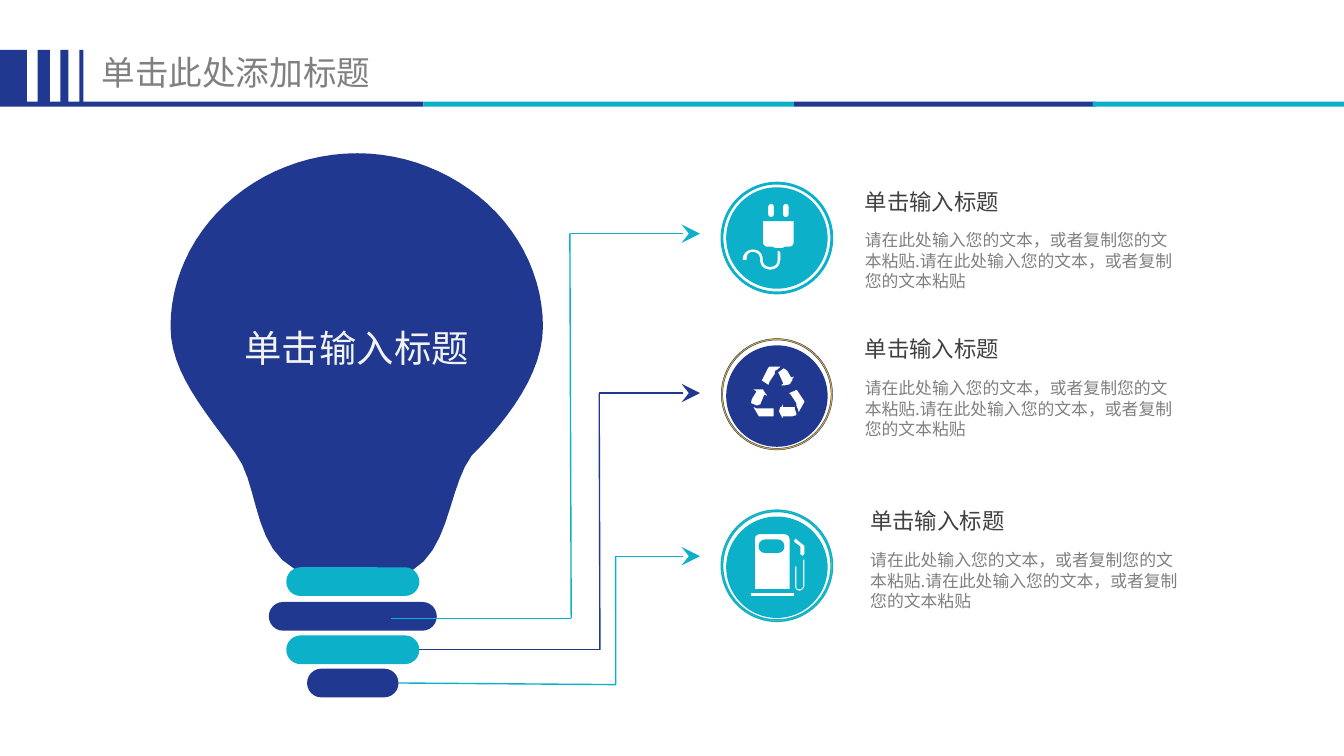
from itertools import cycle

from lxml import etree
from pptx import Presentation
from pptx.dml.color import RGBColor
from pptx.enum import shapes, text
from pptx.oxml.ns import qn
from pptx.util import Pt

HUE = {"navy": "20388F", "teal": "0CB1C9", "white": "FFFFFF", "gold": "FFC000",
       "sky": "00B0F0", "lemon": "EAE05E", "pale": "F2F2F2", "dark": "404040",
       "grey": "808080"}
FONT = "Noto Sans CJK SC"
KIND = shapes.MSO_SHAPE
HEAD = "单击输入标题"
BODY = "请在此处输入您的文本，或者复制您的文本粘贴.请在此处输入您的文本，或者复制您的文本粘贴"

BULB = [(91.4, 175), (91.4, 150.5, 102.2, 126.7, 121, 109.4),
        (139.7, 92.2, 164.9, 82.1, 191.5, 82.1),
        (217.4, 82.1, 242.6, 92.2, 261.4, 109.4),
        (280.1, 126.7, 290.9, 150.5, 290.9, 175),
        (290.9, 199.4, 272.9, 223.9, 252.7, 244.1),
        (236.2, 266.4, 243.4, 316.8, 192.2, 309.6),
        (130.3, 316.1, 143.3, 265, 126, 242.6),
        (109.4, 219.6, 91.4, 199.4, 91.4, 175)]
PLUG = [(-7.9, -9.4), (9.4, -9.4), (9.4, 2.2), (9.4, 3.6, 8.6, 5, 7.2, 5),
        (5, 5), (2.9, 5.8), (-0.7, 5.8), (-2.9, 5), (-5.8, 5),
        (-6.5, 5, -7.9, 3.6, -7.9, 2.2)]
CORD = [(0.7, 6.5), (0, 6.5, 0, 7.2, 0, 7.9), (0, 11.5),
        (0, 13.7, -1.4, 15.1, -3.6, 15.1), (-5.8, 15.1, -7.2, 13.7, -7.2, 11.5),
        (-7.2, 7.9, -9.4, 5.8, -13, 5.8), (-15.8, 5.8, -18.7, 7.9, -18.7, 11.5),
        (-18.7, 12.2, -18, 12.2, -17.3, 12.2), (-16.6, 12.2, -15.8, 12.2, -15.8, 11.5),
        (-15.8, 9.4, -15.1, 7.9, -13, 7.9), (-10.8, 7.9, -9.4, 9.4, -9.4, 11.5),
        (-9.4, 15.1, -7.2, 17.3, -3.6, 17.3), (0, 17.3, 2.2, 15.1, 2.2, 11.5),
        (2.2, 7.9), (2.2, 7.2, 1.4, 6.5, 0.7, 6.5)]
CYCLE = [
    [(8.6, -7.9), (8.6, -7.2), (7.2, -5), (4.3, -4.3), (0.7, -4.3), (2.9, -5.8),
     (0.7, -10.8), (0, -11.5), (0.7, -12.2), (3.6, -14.4), (5.8, -13),
     (7.9, -9.4), (10.8, -10.8)],
    [(0.7, -13), (2.9, -15.1), (-4.3, -15.1), (-5, -14.4), (-8.6, -7.2),
     (-4.3, -4.3), (-3.6, -6.5), (-0.7, -10.8), (-0.7, -12.2)],
    [(4.3, 15.1), (3.6, 12.2), (8.6, 12.2), (10.8, 11.5), (10.8, 10), (10, 7.9),
     (10, 6.5), (3.6, 6.5), (2.9, 2.9), (2.2, 6.5), (1.4, 6.5), (0.7, 9.4),
     (2.2, 12.2)],
    [(10.8, 7.9), (11.5, 10.8), (15.1, 4.3), (15.1, 3.6), (10.8, -2.9),
     (5.8, -0.7), (7.2, 0.7), (10, 5), (10, 6.5)],
    [(-14.4, -2.9), (-11.5, -1.4), (-13.7, 2.2), (-14.4, 5), (-10.8, 6.5),
     (-8.6, 5.8), (-6.5, 0.7), (-3.6, 2.2), (-5.8, -0.7), (-7.2, -2.9)],
    [(-10.8, 7.2), (-13.7, 5.8), (-10, 12.2), (-1.4, 12.2), (-1.4, 7.2)]]
SPOUT = [(15.1, -10.8), (14.4, -11.5), (10.8, -14.4),
         (10.8, -15.1, 10, -15.1, 9.4, -14.4), (8.6, -13.7, 8.6, -13, 9.4, -12.2),
         (12.2, -10.1), (12.2, -6.5), (12.2, -5.8, 13, -5, 13.7, -5),
         (14.4, -5, 15.1, -5.8, 15.1, -6.5)]
HOSE = [(13.7, -3.6), (13.7, 10.8), (13.7, 11.5, 13, 12.2, 12.2, 12.2),
        (10.8, 12.2, 10.8, 11.5, 10.8, 10.8), (10.8, 0), (9.4, 0), (9.4, 10.8),
        (9.4, 12.2, 10, 13.7, 12.2, 13.7), (13.7, 13.7, 15.1, 12.2, 15.1, 10.8),
        (15.1, -3.6)]


def trace(path, steps=12):
    dots = [path[0]]
    for part in path[1:]:
        if len(part) == 2:
            dots.append(part)
            continue
        a, b, c, d = dots[-1], part[:2], part[2:4], part[4:]
        for i in range(1, steps + 1):
            t = i / steps
            s = 1 - t
            dots.append(tuple(s**3 * a[k] + 3 * s * s * t * b[k]
                              + 3 * s * t * t * c[k] + t**3 * d[k] for k in (0, 1)))
    return dots


class Deck:
    def __init__(self, slide):
        self.items = slide.shapes

    def paint(self, item, fill, line=None, wide=0.75):
        item.shadow.inherit = False
        item.fill.solid()
        item.fill.fore_color.rgb = RGBColor.from_string(HUE[fill])
        if line:
            item.line.color.rgb = RGBColor.from_string(HUE[line])
            item.line.width = Pt(wide)
        else:
            item.line.fill.background()
        return item

    def shape(self, kind, x, y, w, h, fill, line=None, adj=None, wide=0.75):
        item = self.items.add_shape(kind, Pt(x), Pt(y), Pt(w), Pt(h))
        if adj is not None:
            item.adjustments[0] = adj
        return self.paint(item, fill, line, wide)

    def free(self, paths, fill, line=None, x=0, y=0):
        pen = None
        for path in paths:
            dots = [(Pt(x + a), Pt(y + b)) for a, b in trace(path)]
            if pen is None:
                pen = self.items.build_freeform(*dots[0], scale=1.0)
            else:
                pen.move_to(*dots[0])
            pen.add_line_segments(dots[1:], close=True)
        return self.paint(pen.convert_to_shape(), fill, line)

    def line(self, x1, y1, x2, y2, hue, arrow=False, base=None):
        item = self.items.add_connector(shapes.MSO_CONNECTOR.STRAIGHT,
                                        Pt(x1), Pt(y1), Pt(x2), Pt(y2))
        item.line.color.rgb = RGBColor.from_string(HUE[hue])
        item.line.width = Pt(0.75)
        if arrow:
            etree.SubElement(item.line._get_or_add_ln(), qn("a:tailEnd"), type="stealth",
                             w="lg", len="lg")
        etree.SubElement(item._element.spPr, qn("a:effectLst"))
        if base is not None:
            item.begin_connect(base, 3)

    def run(self, para, words, size, hue):
        run = para.add_run()
        run.text = words
        run.font.size = Pt(size)
        run.font.name = FONT
        run.font.color.rgb = RGBColor.from_string(HUE[hue])
        etree.SubElement(run.font._element, qn("a:ea"), typeface=FONT)

    def frame(self, item, foot=2.7):
        frame = item.text_frame
        frame.word_wrap = True
        frame.margin_left = frame.margin_right = Pt(5.4)
        frame.margin_top, frame.margin_bottom = Pt(2.7), Pt(foot)
        return frame

    def box(self, x, y, w, h):
        frame = self.frame(self.items.add_textbox(Pt(x), Pt(y), Pt(w), Pt(h)))
        frame.auto_size = text.MSO_AUTO_SIZE.SHAPE_TO_FIT_TEXT
        return frame

    def note(self, x, y):
        frame = self.box(x, y, 175.7, 90.7)
        top = frame.paragraphs[0]
        top.line_spacing = 1.2
        self.run(top, HEAD, 12, "dark")
        para = frame.add_paragraph()
        para.space_before = para.space_after = Pt(8.4)
        self.run(para, BODY, 9, "grey")

    def badge(self, y, rim, line, wide, hue, drop):
        self.shape(KIND.DONUT, MID - 29.8, y - 29.8, 59.6, 59.6, rim, line, 0.013, wide)
        self.shape(KIND.OVAL, MID - 26.8, y - 26.8 + drop, 53.6, 53.6, hue, hue)


MID = 416.2


def main():
    prs = Presentation()
    prs.slide_width, prs.slide_height = Pt(720), Pt(405)
    deck = Deck(prs.slides.add_slide(prs.slide_layouts[6]))

    deck.run(deck.box(49, 25.2, 192.2, 27.4).paragraphs[0], "单击此处添加标题", 18, "grey")
    for x, w in ((0, 14.4), (20.2, 6.5), (32.4, 4.3), (42.5, 2.2)):
        deck.shape(KIND.RECTANGLE, x, 26.7, w, 28.1, "navy")
    spans = ((0, 226.8), (226.8, 198.7), (425.5, 161.3), (585.4, 134.6))
    for (x, w), hue in zip(spans, cycle(("navy", "teal"))):
        deck.shape(KIND.RECTANGLE, x, 54.4, w, 2.8, hue)

    bulb = deck.free([BULB], "navy")
    frame = deck.frame(bulb, 27)
    frame.vertical_anchor = text.MSO_ANCHOR.MIDDLE
    para = frame.paragraphs[0]
    para.alignment = text.PP_ALIGN.CENTER
    para.line_spacing = 1.2
    deck.run(para, HEAD, 20, "pale")

    caps = []
    sizes = ((303.9, 71.3), (322.5, 90), (340.4, 71.3), (358.2, 49))
    for (y, w), hue in zip(sizes, cycle(("teal", "navy"))):
        caps.append(deck.shape(KIND.ROUNDED_RECTANGLE, 189 - w / 2, y, w, 15.4, hue, adj=0.5))

    wires = (("navy", 224.6, 348.1, 321.4, 348.1, 321, 210.6, caps[2]),
             ("teal", 214.6, 365.8, 329.9, 366.8, 329.8, 298, caps[3]),
             ("teal", 209.5, 331.2, 306, 331.2, 305.3, 125.2, None))
    for hue, x, y, turn, low, rise, high, cap in wires:
        deck.line(rise, high, 375, high, hue, arrow=True)
        deck.line(x, y, turn, low, hue, base=cap)
        deck.line(rise, high, turn, low, hue)

    y = 211.2
    deck.badge(y, "gold", "navy", 0.25, "navy", 1)
    deck.free(CYCLE, "white", "navy", MID, y)

    y = 127.5
    deck.badge(y, "sky", "teal", 0.75, "teal", 0)
    for x in (-5, 2.9):
        deck.shape(KIND.ROUNDED_RECTANGLE, MID + x, y - 18.7, 3.8, 7.9, "white", "teal", 0.5)
    for path in (PLUG, CORD):
        deck.free([path], "white", "teal", MID, y)

    y = 303.1
    deck.badge(y, "lemon", "teal", 0.75, "teal", 0.8)
    deck.shape(KIND.RECTANGLE, MID - 14.4, y + 14.4, 23.8, 2.4, "white", "teal")
    for path in (SPOUT, HOSE):
        deck.free([path], "white", "teal", MID, y)
    deck.shape(KIND.ROUND_2_SAME_RECTANGLE, MID - 12.2, y - 17.3, 19.4, 30.2,
               "white", "teal", 0.15)
    deck.shape(KIND.ROUNDED_RECTANGLE, MID - 9.4, y - 13.7, 13, 6.5, "teal", "teal", 0.45)

    for x, y in ((457.9, 95), (457.9, 174.2), (460.8, 266.4)):
        deck.note(x, y)
    prs.save("out.pptx")


if __name__ == "__main__":
    main()
